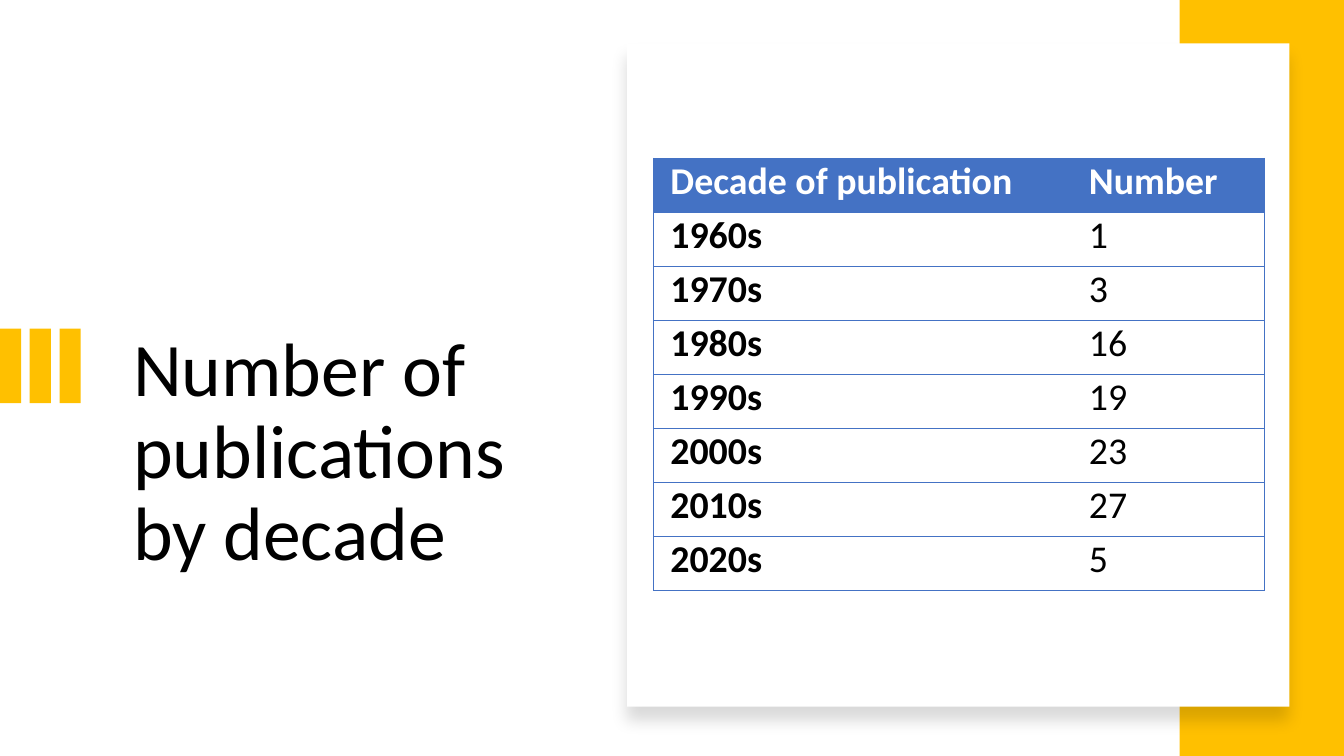
from dataclasses import dataclass

from lxml.etree import SubElement
from pptx import Presentation
from pptx.dml.color import RGBColor
from pptx.enum.shapes import MSO_SHAPE
from pptx.enum.text import MSO_ANCHOR, MSO_AUTO_SIZE, PP_ALIGN
from pptx.oxml import parse_xml
from pptx.oxml.ns import nsdecls, qn
from pptx.shapes.autoshape import Shape
from pptx.slide import Slide
from pptx.table import Table, _Cell
from pptx.text.text import TextFrame
from pptx.util import Inches, Pt

GOLD, BLUE, WHITE, BLACK = "FFC000", "4472C4", "FFFFFF", "000000"


@dataclass
class Block:
    left: float
    top: float
    width: float
    height: float
    fill: str


@dataclass
class Decade:
    name: str
    number: int


TICKS = [Block(0.295 * i, 3.26, 0.21, 0.74, GOLD) for i in range(3)]
SIDE_BAND = Block(11.7, 0, 1.63, 7.5, GOLD)
CARD = Block(6.22, 0.43, 6.57, 6.58, WHITE)
DECADES = [
    Decade("1960s", 1),
    Decade("1970s", 3),
    Decade("1980s", 16),
    Decade("1990s", 19),
    Decade("2000s", 23),
    Decade("2010s", 27),
    Decade("2020s", 5),
]
COLUMNS = [4.15, 1.91]
ROW_HEIGHT = 0.536


def rgb(color: str) -> RGBColor:
    return RGBColor.from_string(color)


def write(tf: TextFrame, text: str, *, size: float, color: str = BLACK,
          bold: bool = False, spacing: float = 1.0) -> None:
    p = tf.paragraphs[0]
    p.alignment = PP_ALIGN.LEFT
    p.line_spacing = spacing
    r = p.add_run()
    r.text = text
    r.font.name = "Calibri"
    r.font.size = Pt(size)
    r.font.bold = bold
    r.font.color.rgb = rgb(color)


def add_block(s: Slide, block: Block) -> Shape:
    sp = s.shapes.add_shape(
        MSO_SHAPE.RECTANGLE, Inches(block.left), Inches(block.top),
        Inches(block.width), Inches(block.height))
    sp.shadow.inherit = False
    sp.fill.solid()
    sp.fill.fore_color.rgb = rgb(block.fill)
    sp.line.fill.background()
    return sp


def add_shadow(sp: Shape, *, blur: float, distance: float, opacity: int) -> None:
    effects = sp._element.spPr.find(qn("a:effectLst"))
    effects.append(parse_xml(
        f'<a:outerShdw {nsdecls("a")} blurRad="{Pt(blur)}" dist="{Pt(distance)}" '
        f'dir="5400000" algn="t" rotWithShape="0"><a:srgbClr val="{BLACK}">'
        f'<a:alpha val="{opacity * 1000}"/></a:srgbClr></a:outerShdw>'))


def set_borders(cell: _Cell, sides: str) -> None:
    props = cell._tc.get_or_add_tcPr()
    for side in "LRTB":
        line = SubElement(props, qn(f"a:ln{side}"), w=str(Pt(0.5)))
        if side in sides:
            fill = SubElement(line, qn("a:solidFill"))
            SubElement(fill, qn("a:srgbClr"), val=BLUE)
        else:
            SubElement(line, qn("a:noFill"))


def fill_cell(cell: _Cell, text: str, *, header: bool, first: bool) -> None:
    cell.margin_left = cell.margin_right = Inches(0.17)
    cell.margin_top = cell.margin_bottom = 0
    cell.vertical_anchor = MSO_ANCHOR.TOP
    set_borders(cell, "LTB" if first else "RTB")
    cell.fill.solid()
    cell.fill.fore_color.rgb = rgb(BLUE if header else WHITE)
    write(cell.text_frame, text, size=27, bold=header or first,
          color=WHITE if header else BLACK)


def add_decade_table(s: Slide) -> Table:
    rows = [("Decade of publication", "Number")]
    rows += [(d.name, str(d.number)) for d in DECADES]
    table = s.shapes.add_table(
        len(rows), len(COLUMNS), Inches(6.48), Inches(1.57),
        Inches(sum(COLUMNS)), Inches(ROW_HEIGHT * len(rows))).table
    table.horz_banding = False
    for column, width in zip(table.columns, COLUMNS):
        column.width = Inches(width)
    for i, row in enumerate(rows):
        table.rows[i].height = Inches(ROW_HEIGHT)
        for j, text in enumerate(row):
            fill_cell(table.cell(i, j), text, header=i == 0, first=j == 0)
    return table


def add_title(s: Slide, text: str) -> None:
    sp = s.shapes.title
    sp.left, sp.top = Inches(1.22), Inches(3.24)
    sp.width, sp.height = Inches(4.41), Inches(2.61)
    tf = sp.text_frame
    tf.word_wrap = True
    tf.auto_size = MSO_AUTO_SIZE.NONE
    tf.vertical_anchor = MSO_ANCHOR.TOP
    write(tf, text, size=54, spacing=0.9)


def main() -> None:
    prs = Presentation()
    prs.slide_width, prs.slide_height = Inches(13.33), Inches(7.5)
    s = prs.slides.add_slide(prs.slide_layouts[5])
    add_title(s, "Number of publications by decade")
    for block in [*TICKS, SIDE_BAND]:
        add_block(s, block)
    add_shadow(add_block(s, CARD), blur=11, distance=10, opacity=15)
    add_decade_table(s)
    prs.save("out.pptx")


if __name__ == "__main__":
    main()
